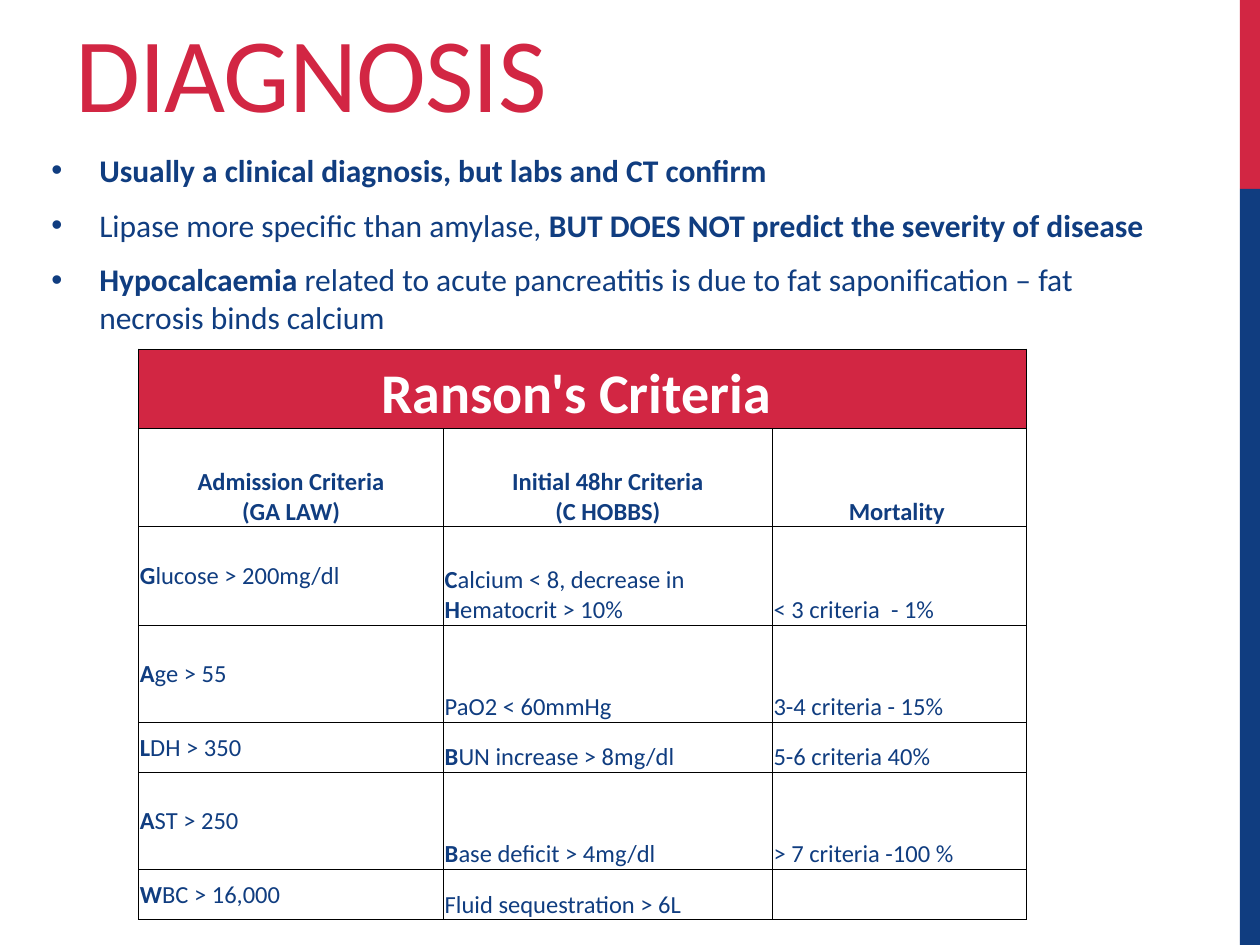
from itertools import accumulate
from pptx import Presentation
from pptx import util as u
from pptx.dml.color import RGBColor
from pptx.enum import shapes, text
from pptx.oxml import parse_xml
from pptx.oxml.ns import nsdecls

RED = RGBColor(0xD2, 0x26, 0x43)
BLUE = RGBColor(0x10, 0x3D, 0x80)
WHITE = RGBColor(0xFF, 0xFF, 0xFF)
FONT = "Calibri"
BOLD_MARK = "**"

HEADING = "DIAGNOSIS"
POINTS = [
    "**Usually a clinical diagnosis, but labs and CT confirm**",
    "Lipase more specific than amylase, **BUT DOES NOT predict the severity of disease**",
    "**Hypocalcaemia **related to acute pancreatitis is due to fat saponification – fat necrosis binds calcium",
]
CRITERIA = [
    ["**Ranson's Criteria **", "", ""],
    ["**Admission Criteria**\n** (GA LAW) **", "**Initial 48hr Criteria**\n** (C HOBBS) **", "**Mortality **"],
    ["**G**lucose > 200mg/dl", "**C**alcium < 8, decrease in **H**ematocrit > 10%", "< 3 criteria  - 1%"],
    ["**A**ge > 55", "PaO2 < 60mmHg", "3-4 criteria - 15%"],
    ["**L**DH > 350", "**B**UN increase > 8mg/dl", "5-6 criteria 40%"],
    ["**A**ST > 250", "**B**ase deficit > 4mg/dl", "> 7 criteria -100 %"],
    ["**W**BC > 16,000", "Fluid sequestration > 6L", ""],
]
COLUMN_WIDTHS = [2.42, 2.61, 2.02]
ROW_HEIGHTS = [0.63, 0.78, 0.78, 0.77, 0.4, 0.77, 0.4]
SIDE_BANDS = [(RED, 1.5), (BLUE, 6)]
CELL_MARGINS = {"margin_left": 0.01, "margin_right": 0.01, "margin_top": 0.01, "margin_bottom": 0}


def apply_format(target, values):
    for name, value in values.items():
        setattr(target, name, value)


def write(paragraph, marked, size, color):
    for index, part in enumerate(marked.split(BOLD_MARK)):
        if part:
            run = paragraph.add_run()
            run.text = part
            apply_format(run.font, {"name": FONT, "size": u.Pt(size), "bold": index % 2 == 1})
            run.font.color.rgb = color


def add_frame(slide, *place):
    frame = slide.shapes.add_textbox(*map(u.Inches, place)).text_frame
    frame.word_wrap = True
    return frame


def add_side_bands(slide):
    tops = accumulate((height for _, height in SIDE_BANDS), initial=0)
    for (color, height), top in zip(SIDE_BANDS, tops):
        band = slide.shapes.add_shape(
            shapes.MSO_SHAPE.RECTANGLE, *map(u.Inches, (9.84, top, 0.16, height)))
        band.shadow.inherit = False
        band.fill.solid()
        band.fill.fore_color.rgb = color
        band.line.fill.background()


def add_heading(slide):
    frame = add_frame(slide, 0.5, 0.17, 9, 0.94)
    frame.vertical_anchor = text.MSO_ANCHOR.BOTTOM
    write(frame.paragraphs[0], HEADING, 60.3, RED)
    frame.paragraphs[0].runs[0].font._element.set("spc", "-60")


def add_points(slide):
    frame = add_frame(slide, 0.31, 1.15, 9, 1.6)
    for index, point in enumerate(POINTS):
        paragraph = frame.add_paragraph() if index else frame.paragraphs[0]
        apply_format(paragraph, {"space_before": u.Pt(3.6), "space_after": u.Pt(6)})
        write(paragraph, point, 18, BLUE)
        properties = paragraph._p.get_or_add_pPr()
        properties.set("marL", str(u.Inches(0.38)))
        properties.set("indent", str(u.Inches(-0.38)))
        properties.append(parse_xml(f'<a:buFont {nsdecls("a")} typeface="Arial"/>'))
        properties.append(parse_xml(f'<a:buChar {nsdecls("a")} char="•"/>'))


def add_borders(cell):
    properties = cell._tc.get_or_add_tcPr()
    for side in "LRTB":
        properties.append(parse_xml(
            f'<a:ln{side} {nsdecls("a")} w="{u.Pt(0.5)}"><a:solidFill>'
            f'<a:srgbClr val="000000"/></a:solidFill></a:ln{side}>'))


def add_criteria(slide):
    place = (1.1, 2.77, sum(COLUMN_WIDTHS), sum(ROW_HEIGHTS))
    table = slide.shapes.add_table(
        len(CRITERIA), len(COLUMN_WIDTHS), *map(u.Inches, place)).table
    apply_format(table, {"first_row": False, "horz_banding": False})
    for column, width in zip(table.columns, COLUMN_WIDTHS):
        column.width = u.Inches(width)
    for row, height in zip(table.rows, ROW_HEIGHTS):
        row.height = u.Inches(height)
    table.cell(0, 0).merge(table.cell(0, len(COLUMN_WIDTHS) - 1))

    for r, entries in enumerate(CRITERIA):
        for c, entry in enumerate(entries):
            cell = table.cell(r, c)
            add_borders(cell)
            cell.fill.solid()
            cell.fill.fore_color.rgb = WHITE if r else RED
            middle = r > 1 and c == 0
            cell.vertical_anchor = text.MSO_ANCHOR.MIDDLE if middle else text.MSO_ANCHOR.BOTTOM
            apply_format(cell, {name: u.Inches(size) for name, size in CELL_MARGINS.items()})
            for index, line in enumerate(entry.split("\n")):
                frame = cell.text_frame
                paragraph = frame.add_paragraph() if index else frame.paragraphs[0]
                paragraph.alignment = text.PP_ALIGN.LEFT if r > 1 else text.PP_ALIGN.CENTER
                write(paragraph, line, 14 if r else 32, BLUE if r else WHITE)


def main():
    deck = Presentation()
    apply_format(deck, {"slide_width": u.Inches(10), "slide_height": u.Inches(7.5)})
    slide = deck.slides.add_slide(deck.slide_layouts[6])
    add_side_bands(slide)
    add_heading(slide)
    add_points(slide)
    add_criteria(slide)
    deck.save("out.pptx")


if __name__ == "__main__":
    main()
